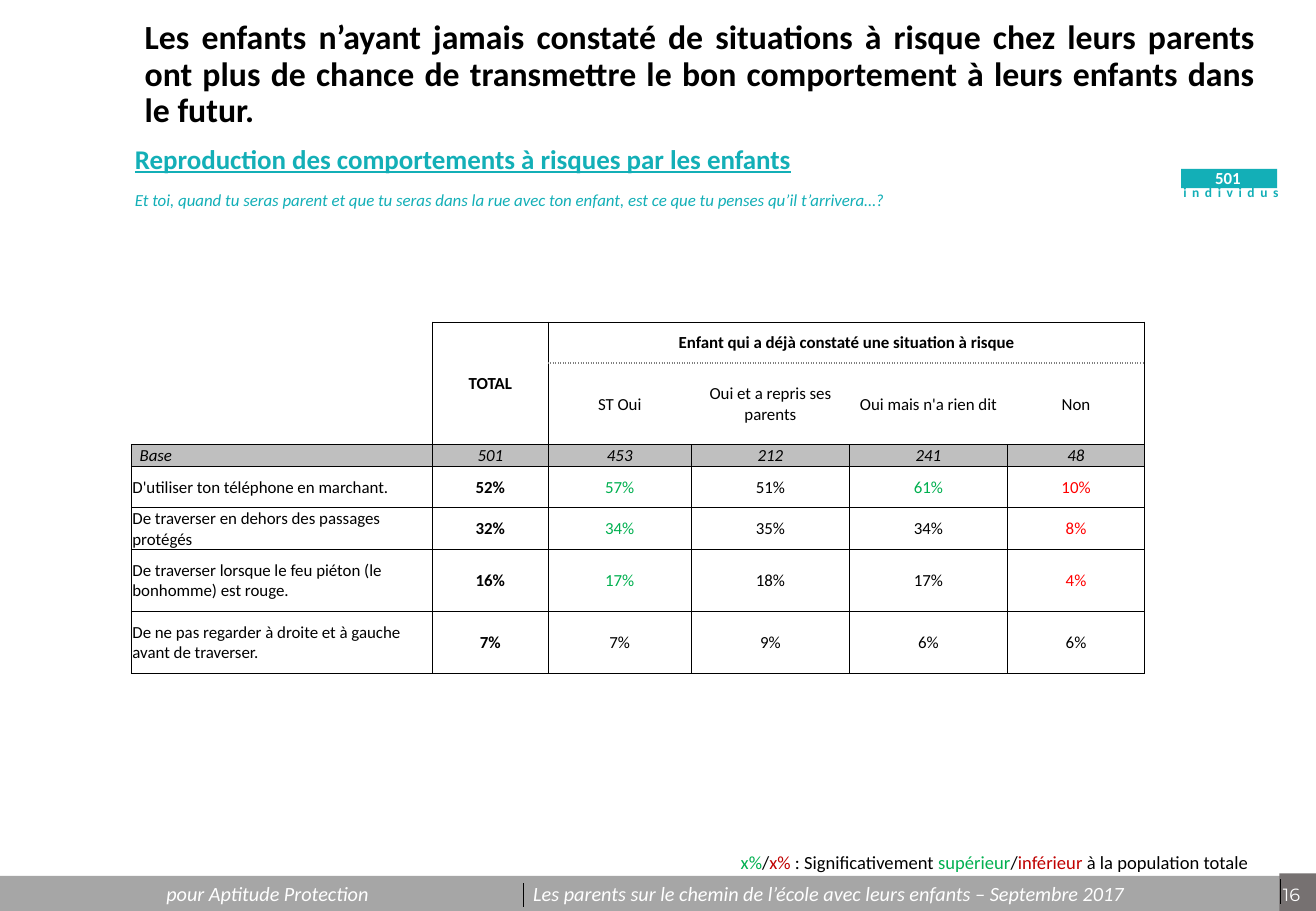
from lxml import etree
from pptx import Presentation, util as u
from pptx.dml.color import RGBColor
from pptx.enum import shapes, text
from pptx.oxml import ns

BLACK = RGBColor(0, 0, 0)
WHITE = RGBColor(255, 255, 255)
TEAL = RGBColor(0x13, 0xAF, 0xB7)
GREEN = RGBColor(0, 0xB0, 0x50)
RED = RGBColor(255, 0, 0)
DARK_RED = RGBColor(0xC0, 0, 0)
BAR = RGBColor(0xA6, 0xA6, 0xA6)
CORNER = RGBColor(0x76, 0x71, 0x71)
BASE = RGBColor(0xBF, 0xBF, 0xBF)

LEFT, MID, RIGHT = text.PP_ALIGN.LEFT, text.PP_ALIGN.CENTER, text.PP_ALIGN.RIGHT
SOLID, DOT = ("000000", 0.5, "solid"), ("808080", 1, "sysDot")

COLS = [2.48, 0.95, 1.18, 1.3, 1.3, 1.13]
ROWS = [0.34, 0.67, 0.18, 0.34, 0.34, 0.51, 0.51]
# A leading + marks a score above the total, a leading - one below it
CELLS = [
    ["", "TOTAL", "Enfant qui a déjà constaté une situation à risque", "", "", ""],
    ["", "", "ST Oui", "Oui et a repris ses parents", "Oui mais n'a rien dit", "Non"],
    ["Base", "501", "453", "212", "241", "48"],
    ["D'utiliser ton téléphone en marchant.", "52%", "+57%", "51%", "+61%", "-10%"],
    ["De traverser en dehors des passages protégés", "32%", "+34%", "35%", "34%", "-8%"],
    ["De traverser lorsque le feu piéton (le bonhomme) est rouge.",
     "16%", "+17%", "18%", "17%", "-4%"],
    ["De ne pas regarder à droite et à gauche avant de traverser.",
     "7%", "7%", "9%", "6%", "6%"],
]


def place(item, box):
    for name, size in zip(("left", "top", "width", "height"), box):
        setattr(item, name, u.Inches(size))


def write(para, words, size, color, align=LEFT, face="Calibri", **style):
    para.alignment = align
    run = para.add_run()
    run.text = words
    run.font.color.rgb = color
    look = {"name": face, "size": u.Pt(size), **style}
    for name, value in look.items():
        setattr(run.font, name, value)
    return run


def label(slide, box, words, size, color, wrap=True, **style):
    frame = slide.shapes.add_textbox(*map(u.Inches, box)).text_frame
    frame.word_wrap = wrap
    return write(frame.paragraphs[0], words, size, color, **style)


def block(slide, box, color):
    rect = slide.shapes.add_shape(shapes.MSO_SHAPE.RECTANGLE, *map(u.Inches, box))
    rect.shadow.inherit = False
    rect.fill.solid()
    rect.fill.fore_color.rgb = color
    rect.line.fill.background()


def rule(slide, x, top, end):
    line = slide.shapes.add_connector(
        shapes.MSO_CONNECTOR.STRAIGHT, *map(u.Inches, (x, top, x, end)))
    line.line.color.rgb = BLACK
    line.line.width = u.Pt(0.5)
    etree.SubElement(line._element.spPr, ns.qn("a:effectLst"))


def holder(item, box, anchor):
    place(item, box)
    frame = item.text_frame
    frame.word_wrap = True
    frame.auto_size = text.MSO_AUTO_SIZE.NONE
    frame.vertical_anchor = anchor
    return frame


def plain(para, before=0):
    props = para._p.get_or_add_pPr()
    props.set("marL", "0")
    props.set("indent", "0")
    para.line_spacing = 0.9
    para.space_before = u.Pt(before)
    etree.SubElement(props, ns.qn("a:buNone"))
    return para


def edges(row, col):
    sides = dict.fromkeys(("lnL", "lnR", "lnT", "lnB"), SOLID)
    if row < 2 and col == 0:
        sides.update(lnL=None, lnT=None)
        if row == 0:
            sides["lnB"] = None
    if row < 2 and col > 1:
        sides["lnB" if row == 0 else "lnT"] = DOT
    if row == 1 and col > 2:
        sides["lnL"] = None
    if row == 1 and 2 <= col < 5:
        sides["lnR"] = None
    return sides


def border(cell, sides):
    props = cell._tc.get_or_add_tcPr()
    for spot, (side, kind) in enumerate(sides.items()):
        line = etree.Element(ns.qn("a:" + side))
        props.insert(spot, line)
        if kind is None:
            etree.SubElement(line, ns.qn("a:noFill"))
            continue
        color, width, dash = kind
        line.set("w", str(u.Pt(width)))
        fill = etree.SubElement(line, ns.qn("a:solidFill"))
        etree.SubElement(fill, ns.qn("a:srgbClr"), val=color)
        etree.SubElement(line, ns.qn("a:prstDash"), val=dash)


def entry(cell, row, col, words):
    inset = 0.07 if (row, col) == (2, 0) else 0.01
    look = {"margin_left": u.Inches(inset), "margin_right": u.Inches(0.01),
            "margin_top": u.Inches(0.01), "margin_bottom": 0,
            "vertical_anchor": text.MSO_ANCHOR.MIDDLE}
    for name, value in look.items():
        setattr(cell, name, value)
    if row == 2:
        cell.fill.solid()
        cell.fill.fore_color.rgb = BASE
    else:
        cell.fill.background()
    border(cell, edges(row, col))
    if words:
        color = {"+": GREEN, "-": RED}.get(words[0], BLACK)
        write(cell.text_frame.paragraphs[0], words.lstrip("+-"), 10, color,
              MID if col else LEFT, italic=row == 2,
              bold=row == 0 or (col == 1 and row > 2))


def grid(slide):
    box = map(u.Inches, (1.08, 2.65, sum(COLS), sum(ROWS)))
    table = slide.shapes.add_table(len(ROWS), len(COLS), *box).table
    table.first_row = table.horz_banding = False
    for col, width in zip(table.columns, COLS):
        col.width = u.Inches(width)
    for row, height in zip(table.rows, ROWS):
        row.height = u.Inches(height)
    for r, line in enumerate(CELLS):
        for c, words in enumerate(line):
            entry(table.cell(r, c), r, c, words)
    table.cell(0, 1).merge(table.cell(1, 1))
    table.cell(0, 2).merge(table.cell(0, 5))


def footer(slide):
    block(slide, (0, 7.21, 10.83, 0.29), BAR)
    block(slide, (10.53, 7.19, 0.3, 0.31), CORNER)
    rule(slide, 10.54, 7.24, 7.44)
    rule(slide, 4.31, 7.27, 7.47)
    label(slide, (10.46, 7.23, 0.62, 0.28), "16", 10.5, WHITE, face="Montserrat")
    label(slide, (1.27, 7.21, 1.88, 0.3), "pour Aptitude Protection",
          12, WHITE, wrap=False, italic=True)
    label(slide, (4.29, 7.21, 5.14, 0.3),
          "Les parents sur le chemin de l’école avec leurs enfants – Septembre 2017",
          12, WHITE, wrap=False, italic=True)


def heading(slide):
    title, body, count = slide.placeholders
    # Title
    frame = holder(title, (1.09, 0.31, 9.34, 0.62), text.MSO_ANCHOR.MIDDLE)
    para = frame.paragraphs[0]
    para.line_spacing = 0.9
    write(para, "Les enfants n’ayant jamais constaté de situations à risque chez leurs "
          "parents ont plus de chance de transmettre le bon comportement à leurs "
          "enfants dans le futur.", 20, BLACK, text.PP_ALIGN.JUSTIFY, bold=True)
    # Subject and question
    frame = holder(body, (1.01, 1.15, 8.11, 0.47), text.MSO_ANCHOR.TOP)
    write(plain(frame.paragraphs[0]),
          "Reproduction des comportements à risques par les enfants",
          16, TEAL, bold=True, underline=True)
    write(plain(frame.add_paragraph(), 10),
          "Et toi, quand tu seras parent et que tu seras dans la rue avec ton enfant, "
          "est ce que tu penses qu’il t’arrivera…?", 10, TEAL, italic=True)
    # Sample size
    block(slide, (9.72, 1.39, 0.79, 0.16), TEAL)
    slide.shapes._spTree.append(count._element)
    frame = holder(count, (9.71, 1.39, 0.79, 0.16), text.MSO_ANCHOR.MIDDLE)
    write(plain(frame.paragraphs[0]), "501", 10, WHITE, MID, bold=True)
    unit = label(slide, (9.64, 1.47, 1.04, 0.24), "individus", 8, TEAL, bold=True)
    unit._r.get_or_add_rPr().set("spc", "330")


def legend(slide):
    frame = slide.shapes.add_textbox(*map(u.Inches, (4.15, 6.96, 6.22, 0.29))).text_frame
    frame.word_wrap = True
    parts = [("x%", GREEN), ("/", BLACK), ("x%", DARK_RED),
             (" : Significativement ", BLACK), ("supérieur", GREEN), ("/", BLACK),
             ("inférieur", DARK_RED), (" à la population totale", BLACK)]
    for words, color in parts:
        write(frame.paragraphs[0], words, 11, color, RIGHT)


def main():
    deck = Presentation()
    deck.slide_width, deck.slide_height = u.Inches(10.83), u.Inches(7.5)
    slide = deck.slides.add_slide(deck.slide_layouts[3])
    footer(slide)
    heading(slide)
    grid(slide)
    legend(slide)
    deck.save("out.pptx")


if __name__ == "__main__":
    main()
